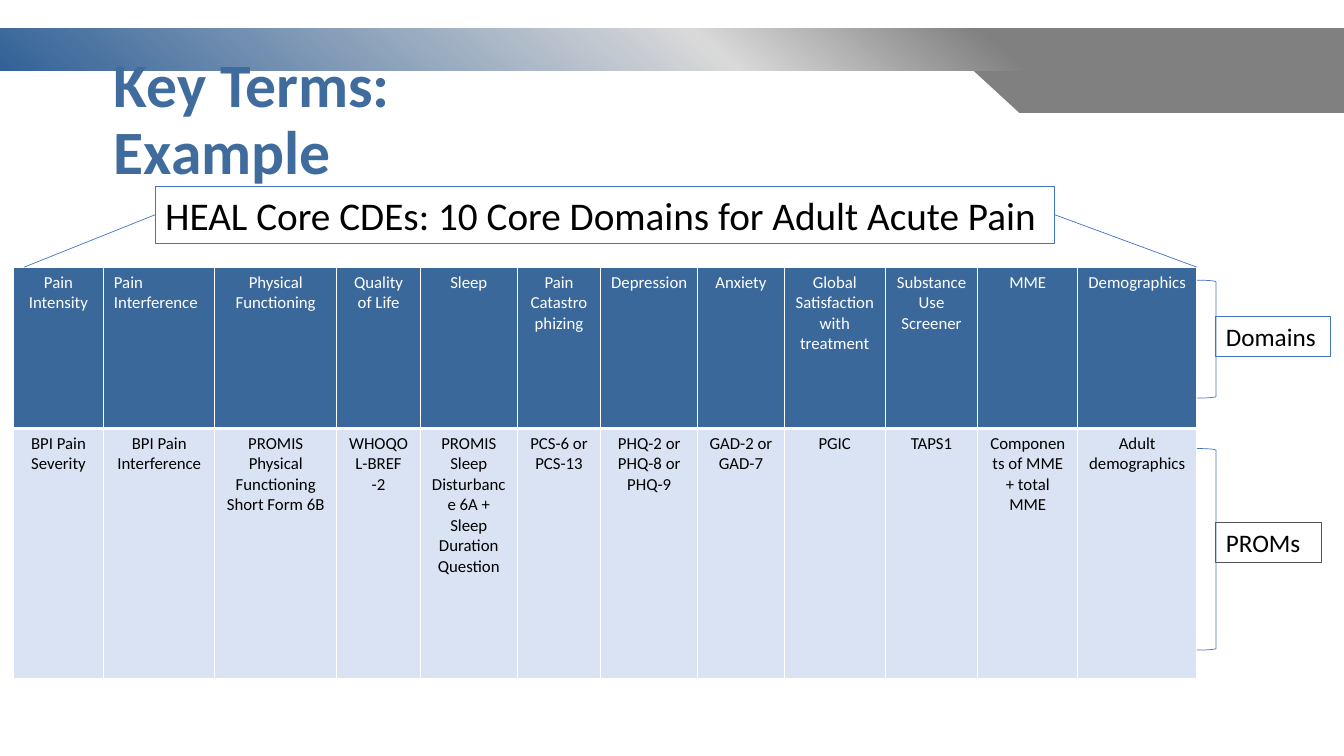
from typing import NamedTuple

from lxml.etree import SubElement as Sub
from pptx import Presentation
from pptx.dml.color import RGBColor
from pptx.enum.shapes import MSO_CONNECTOR as Conn, MSO_SHAPE as Shape
from pptx.enum.text import MSO_ANCHOR as Anchor, PP_ALIGN as Align
from pptx.oxml.ns import qn
from pptx.util import Inches, Pt

FONT, BLUE, WHITE, BLACK = "Calibri", "4472C4", "FFFFFF", "000000"


class Label(NamedTuple):
    text: str
    left: float
    top: float
    width: float
    height: float
    size: int
    edge: str


class Column(NamedTuple):
    domain: str
    measure: str  # one paragraph per line
    width: float
    align: Align = Align.CENTER


LABELS = [
    Label("HEAL Core CDEs: 10 Core Domains for Adult Acute Pain",
          1.54, 1.85, 8.92, 0.57, 28, BLUE),
    Label("Domains", 12.06, 3.14, 1.14, 0.4, 18, BLUE),
    Label("PROMs", 12.06, 5.18, 1.05, 0.4, 18, "525252"),
]
COLUMNS = [
    Column("Pain Intensity", "BPI Pain Severity", 0.9),
    Column("Pain Interference", "BPI Pain Interference", 1.1, Align.LEFT),
    Column("Physical Functioning",
           "PROMIS Physical Functioning Short Form 6B", 1.21),
    Column("Quality of Life", "WHOQOL-BREF -2", 0.83),
    Column("Sleep",
           "PROMIS Sleep Disturbance 6A + Sleep Duration Question", 0.96),
    Column("Pain Catastrophizing", "PCS-6 or\nPCS-13", 0.83),
    Column("Depression", "PHQ-2 or\nPHQ-8 or\nPHQ-9", 0.96),
    Column("Anxiety", "GAD-2 or\nGAD-7", 0.86),
    Column("Global Satisfaction with treatment", "PGIC", 1),
    Column("Substance Use Screener", "TAPS1", 0.92),
    Column("MME", "Components of MME + total MME", 0.99),
    Column("Demographics", "Adult demographics", 1.18),
]
ROWS = [1.6, 2.48]
BRACKETS = [(2.78, 1.17), (4.45, 2)]  # top, height
LINES = [(1.54, 0.24), (10.46, 11.87)]  # x at the box, x at the table


def color(code: str) -> RGBColor:
    return RGBColor.from_string(code)


def box(*sides: float) -> list:
    return [Inches(side) for side in sides]


def write(frame, text: str, size: int, tone: str, align=Align.LEFT,
          bold: bool = False) -> None:
    frame.word_wrap = True
    for i, part in enumerate(text.split("\n")):
        para = frame.add_paragraph() if i else frame.paragraphs[0]
        para.alignment = align
        run = para.add_run()
        run.text = part
        font = run.font
        font.name, font.size, font.bold = FONT, Pt(size), bold
        font.color.rgb = color(tone)


def stroke(item, tone: str, width: float) -> None:
    item.line.color.rgb = color(tone)
    item.line.width = Pt(width)


def fill_cell(cell, text: str, tone: str, back: str, align: Align,
              edges: dict) -> None:
    write(cell.text_frame, text, 12, tone, align)
    props = cell._tc.get_or_add_tcPr()
    for side, width in edges.items():
        line = Sub(props, qn(f"a:ln{side}"), w=str(Pt(width)))
        Sub(Sub(line, qn("a:solidFill")), qn("a:srgbClr"), val=WHITE)
    cell.fill.solid()
    cell.fill.fore_color.rgb = color(back)


def draw_band(shapes) -> None:
    build = shapes.build_freeform(Inches(9.62), Inches(0.67))
    points = [(13.33, 0.28), (13.33, 1.12), (10.11, 1.12)]
    build.add_line_segments([box(*point) for point in points])
    wedge = build.convert_to_shape()
    wedge.fill.solid()
    wedge.fill.fore_color.rgb = color("808080")
    band = shapes.add_shape(Shape.RECTANGLE, *box(0, 0.28, 13.33, 0.42))
    band.fill.gradient()
    band.fill.gradient_angle = 230
    stops = band._element.spPr.find(qn("a:gradFill")).find(qn("a:gsLst"))
    for stop in list(stops):
        stops.remove(stop)
    for spot, tone in [(26, "808080"), (47, "D9D9D9"), (100, "336298")]:
        stop = Sub(stops, qn("a:gs"), pos=str(spot * 1000))
        Sub(stop, qn("a:srgbClr"), val=tone)
    for part in (wedge, band):
        part.line.fill.background()
        part.shadow.inherit = False


def draw_title(shapes) -> None:
    title = shapes.title
    title.left, title.top, title.width, title.height = box(
        1.03, 0.78, 5.2, 0.84)
    frame = title.text_frame
    frame.vertical_anchor = Anchor.MIDDLE
    write(frame, "Key Terms: Example", 44, "3F6B9D", bold=True)
    frame.paragraphs[0].line_spacing = 0.9
    shapes._spTree.append(title._element)  # in front of the band


def draw_label(shapes, label: Label) -> None:
    item = shapes.add_textbox(
        *box(label.left, label.top, label.width, label.height))
    stroke(item, label.edge, 0.75)
    write(item.text_frame, label.text, label.size, BLACK)


def draw_table(shapes) -> None:
    width = sum(col.width for col in COLUMNS)
    table = shapes.add_table(len(ROWS), len(COLUMNS),
                             *box(0.13, 2.65, width, sum(ROWS))).table
    for row, height in zip(table.rows, ROWS):
        row.height = Inches(height)
    for i, col in enumerate(COLUMNS):
        table.columns[i].width = Inches(col.width)
        fill_cell(table.cell(0, i), col.domain, WHITE, "3B689B", col.align,
                  {"L": 1, "R": 1, "T": 1, "B": 3})
        fill_cell(table.cell(1, i), col.measure, BLACK, "DAE3F3",
                  Align.CENTER, {"L": 1, "R": 1, "B": 1})


def draw_bracket(shapes, top: float, height: float) -> None:
    item = shapes.add_shape(Shape.RIGHT_BRACKET,
                            *box(11.87, top, 0.19, height))
    item.fill.background()
    item.shadow.inherit = False
    stroke(item, BLUE, 0.5)


def draw_line(shapes, start: float, end: float) -> None:
    line = shapes.add_connector(Conn.STRAIGHT, *box(start, 2.13, end, 2.65))
    stroke(line, BLUE, 0.5)
    Sub(line._element.spPr, qn("a:effectLst"))


def main() -> None:
    deck = Presentation()
    deck.slide_width, deck.slide_height = box(13.33, 7.5)
    shapes = deck.slides.add_slide(deck.slide_layouts[5]).shapes
    # Header
    draw_band(shapes)
    draw_title(shapes)
    # Domains and measures
    draw_table(shapes)
    for label in LABELS:
        draw_label(shapes, label)
    # Brackets and lines
    for top, height in BRACKETS:
        draw_bracket(shapes, top, height)
    for start, end in LINES:
        draw_line(shapes, start, end)
    deck.save("out.pptx")


if __name__ == "__main__":
    main()
